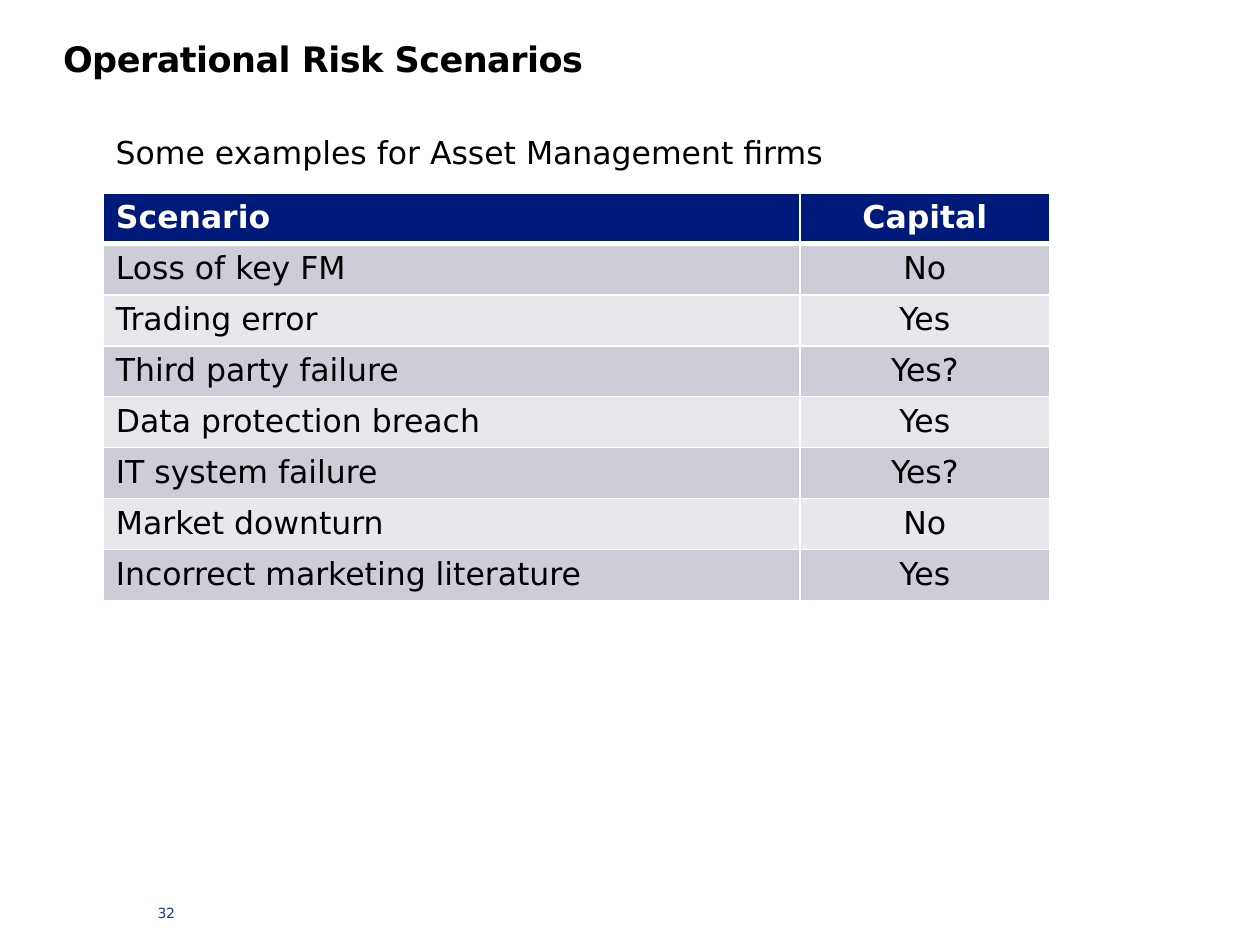
from lxml import etree
from pptx import Presentation
from pptx.dml import color
from pptx.enum import text
from pptx.oxml import ns
from pptx.util import Inches, Pt

FONT = "DejaVu Sans"
NAVY, WHITE, BLACK = "001A7B", "FFFFFF", "000000"
BANDS = ("CCCDD7", "E7E8EC")
ROWS = [
    ("Scenario", "Capital"),
    ("Loss of key FM", "No"),
    ("Trading error", "Yes"),
    ("Third party failure", "Yes?"),
    ("Data protection breach", "Yes"),
    ("IT system failure", "Yes?"),
    ("Market downturn", "No"),
    ("Incorrect marketing literature", "Yes"),
]
COL_WIDTHS = (5.53, 1.98)


def rgb(value):
    return color.RGBColor.from_string(value)


def write(tf, content, size, fill, bold=False, align=text.PP_ALIGN.LEFT, spacing=None):
    p = tf.paragraphs[0]
    p.alignment = align
    r = p.add_run()
    r.text = content
    for name, value in {"name": FONT, "size": Pt(size), "bold": bold}.items():
        setattr(r.font, name, value)
    r.font.color.rgb = rgb(fill)
    if spacing is not None:
        r._r.get_or_add_rPr().set("spc", str(round(spacing * 100)))


def frame(sp, **extra):
    tf = sp.text_frame
    formats = {
        "margin_left": 0, "margin_right": 0, "margin_top": 0, "margin_bottom": 0,
        "word_wrap": True, "auto_size": text.MSO_AUTO_SIZE.NONE,
        "vertical_anchor": text.MSO_ANCHOR.TOP,
    }
    for name, value in {**formats, **extra}.items():
        setattr(tf, name, value)
    return tf


def add_title(s, content):
    sp = s.shapes.title
    box = {"left": 0.5, "top": 0.3, "width": 7.54, "height": 0.8}
    for name, value in box.items():
        setattr(sp, name, Inches(value))
    write(frame(sp), content, 20, BLACK, bold=True, spacing=-0.3)


def add_text(s, box, content, size, fill, spacing=None, **extra):
    sp = s.shapes.add_textbox(*map(Inches, box))
    write(frame(sp, **extra), content, size, fill, spacing=spacing)


def set_borders(cell, bottom):
    tcPr = cell._tc.get_or_add_tcPr()
    for side, width in {"L": 1, "R": 1, "T": 1, "B": bottom}.items():
        ln = etree.SubElement(tcPr, ns.qn(f"a:ln{side}"), w=str(Pt(width)))
        fill = etree.SubElement(ln, ns.qn("a:solidFill"))
        etree.SubElement(fill, ns.qn("a:srgbClr"), val=WHITE)


def add_scenario_table(s):
    box = map(Inches, (0.82, 1.53, sum(COL_WIDTHS), 3.24))
    table = s.shapes.add_table(len(ROWS), len(COL_WIDTHS), *box).table
    for column, width in zip(table.columns, COL_WIDTHS):
        column.width = Inches(width)
    for i, row in enumerate(ROWS):
        header = i == 0
        for j, content in enumerate(row):
            cell = table.cell(i, j)
            set_borders(cell, 3 if header else 1)
            cell.fill.solid()
            cell.fill.fore_color.rgb = rgb(NAVY if header else BANDS[(i - 1) % 2])
            align = text.PP_ALIGN.CENTER if j else text.PP_ALIGN.LEFT
            write(cell.text_frame, content, 18, WHITE if header else BLACK, header, align)


def main():
    prs = Presentation()
    prs.slide_width, prs.slide_height = Inches(10), Inches(7.5)
    s = prs.slides.add_slide(prs.slide_layouts[5])
    add_title(s, "Operational Risk Scenarios")
    add_text(s, (1.25, 7.18, 1.42, 0.21), "32", 8, "193989", spacing=-0.1)
    add_scenario_table(s)
    add_text(s, (0.82, 1.01, 5.89, 0.4), "Some examples for Asset Management firms", 18, BLACK,
             margin_left=Inches(0.1), margin_right=Inches(0.1),
             margin_top=Inches(0.05), margin_bottom=Inches(0.05),
             word_wrap=False, auto_size=text.MSO_AUTO_SIZE.SHAPE_TO_FIT_TEXT)
    prs.save("out.pptx")


if __name__ == "__main__":
    main()
